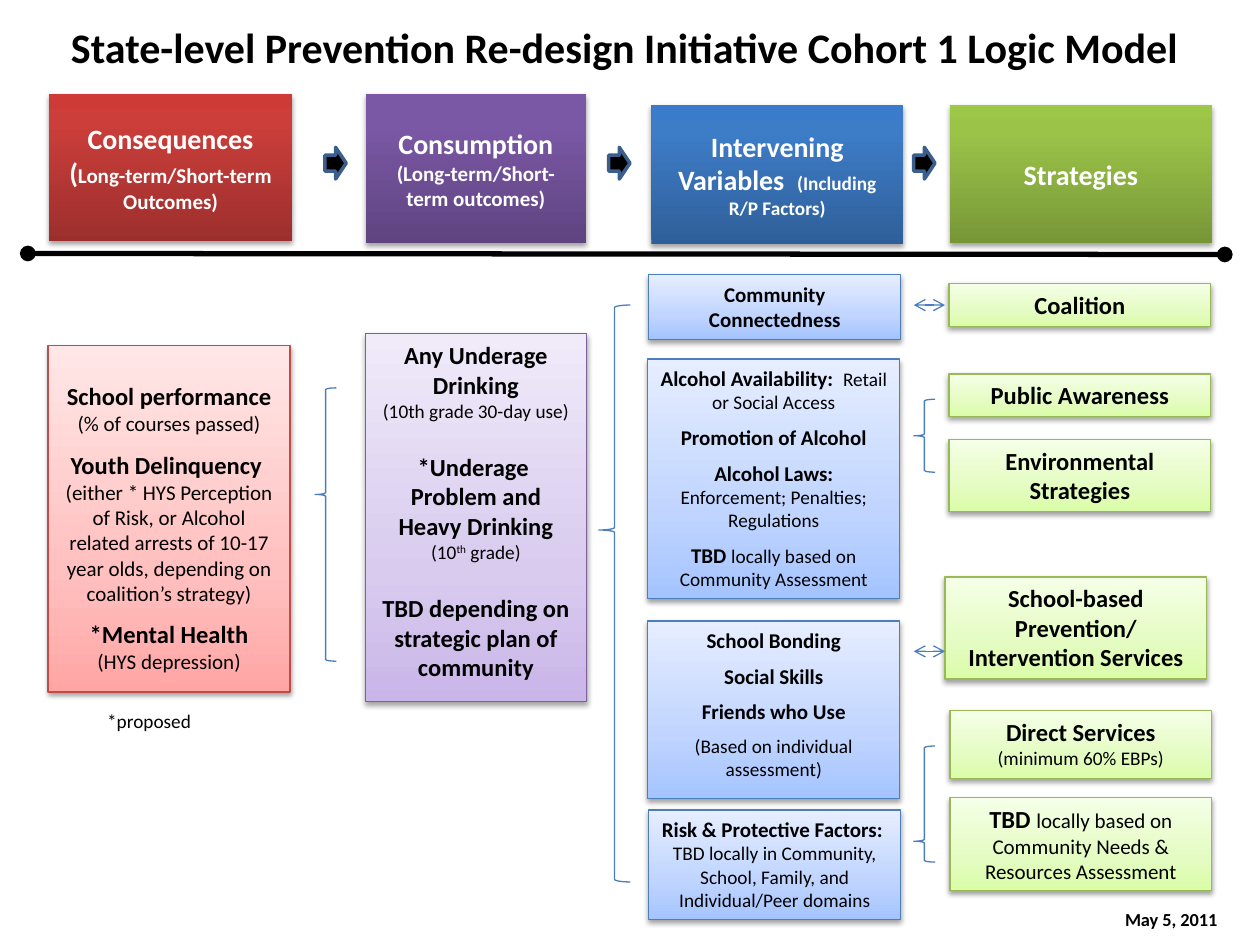
from copy import deepcopy
from typing import NamedTuple

from lxml.etree import SubElement
from pptx import Presentation
from pptx.dml.color import RGBColor
from pptx.enum.shapes import MSO_CONNECTOR as Connector, MSO_SHAPE as Shape
from pptx.enum.text import MSO_ANCHOR as Anchor, MSO_AUTO_SIZE as AutoSize, PP_ALIGN as Align
from pptx.oxml.ns import qn
from pptx.util import Cm, Pt

BLACK, WHITE, BLUE = "000000", "FFFFFF", "4B7EBC"
BLANK_LINE = 17


class Run(NamedTuple):
    text: str
    size: float
    bold: bool = False
    raised: bool = False


def strong(text, size=14):
    return Run(text, size, True)


def plain(text, size=11):
    return Run(text, size)


def color(hex_string):
    return RGBColor.from_string(hex_string)


def write(frame, *paragraphs, ink=BLACK, align=Align.CENTER, anchor=Anchor.TOP, top=0.13):
    """Fill a frame; each paragraph is (points of space before, run, run, ...)."""
    frame.word_wrap = True
    frame.auto_size = AutoSize.NONE
    frame.vertical_anchor = anchor
    frame.margin_left = frame.margin_right = Cm(0.25)
    frame.margin_top, frame.margin_bottom = Cm(top), Cm(0.13)
    for number, (before, *runs) in enumerate(paragraphs):
        paragraph = frame.paragraphs[0] if number == 0 else frame.add_paragraph()
        paragraph.alignment = align
        paragraph.space_before = Pt(before)
        for part in runs:
            for index, line in enumerate(part.text.split("\n")):
                if index:
                    paragraph.add_line_break()
                run = paragraph.add_run()
                run.text = line
                run.font.name, run.font.size = "Calibri", Pt(part.size)
                run.font.bold = part.bold
                run.font.color.rgb = color(ink)
                if part.raised:
                    run.font._element.set("baseline", "30000")


class LogicModel:
    """The slide, with the gradient and border of each column."""
    HEADERS = {
        "red": ("9C2F2D", "CB3E3A", "CE3B37"),
        "purple": ("5F4480", "7B58A6", "7C57A8"),
        "blue": ("2F5F99", "3D7CC7", "3A7CCB"),
        "green": ("779737", "9BC348", "9DC746"),
    }
    CARDS = {
        "red": ("FFA6A5", "FFC0BF", "FFE7E7"),
        "purple": ("C9B5E8", "D8CBEE", "F0EAF9"),
        "blue": ("A4C4FF", "BFD4FF", "E6EEFF"),
        "green": ("DAFDA7", "E4FCC2", "F5FFE7"),
    }
    BORDERS = {"red": "BF4C48", "purple": "7D60A0", "blue": BLUE, "green": "98B955"}

    def __init__(self, slide):
        self.slide = slide

    def title(self, box, text):
        heading = self.slide.shapes.title
        heading.left, heading.top, heading.width, heading.height = map(Cm, box)
        write(heading.text_frame, (0, strong(text, 24)))

    def label(self, box, run, anchor=Anchor.TOP):
        frame = self.slide.shapes.add_textbox(*map(Cm, box)).text_frame
        write(frame, (0, run), align=Align.LEFT, anchor=anchor)

    def shape(self, kind, box):
        shape = self.slide.shapes.add_shape(kind, *map(Cm, box))
        shape.shadow.inherit = False
        return shape

    def panel(self, box, shades, middle):
        """Rectangle with a three-stop upward gradient and a soft shadow."""
        panel = self.shape(Shape.RECTANGLE, box)
        panel.fill.gradient()
        panel.fill.gradient_angle = 90
        properties = panel._element.spPr
        stops = properties.find(".//" + qn("a:gsLst"))
        stops.append(deepcopy(stops[0]))
        for stop, place, shade in zip(panel.fill.gradient_stops, (0, middle, 1), shades):
            stop.color.rgb = color(shade)
            stop.position = place
        shadow = SubElement(properties.find(qn("a:effectLst")), qn("a:outerShdw"),
                            blurRad="39400", dist="22000", dir="5400000", rotWithShape="0")
        tone = SubElement(shadow, qn("a:srgbClr"), val=BLACK)
        SubElement(tone, qn("a:alpha"), val="36000")
        return panel

    def header(self, hue, box, *paragraphs):
        panel = self.panel(box, self.HEADERS[hue], 0.8)
        panel.line.fill.background()
        write(panel.text_frame, *paragraphs, ink=WHITE, anchor=Anchor.MIDDLE)

    def card(self, hue, box, *paragraphs, top=0.13):
        panel = self.panel(box, self.CARDS[hue], 0.35)
        panel.line.color.rgb = color(self.BORDERS[hue])
        panel.line.width = Pt(0.75)
        write(panel.text_frame, *paragraphs, top=top)

    def line(self, start, end, ink, width, tip):
        line = self.slide.shapes.add_connector(Connector.STRAIGHT, *map(Cm, start + end))
        line.line.color.rgb = color(ink)
        line.line.width = Pt(width)
        for side in ("a:headEnd", "a:tailEnd"):
            SubElement(line.line._get_or_add_ln(), qn(side), type=tip)
        SubElement(line._element.spPr, qn("a:effectLst"))

    def brace(self, box, point):
        brace = self.shape(Shape.LEFT_BRACE, box)
        brace.adjustments[0], brace.adjustments[1] = 0.08, point
        brace.fill.background()
        brace.line.color.rgb = color(BLUE)
        brace.line.width = Pt(0.75)

    def block_arrow(self, left):
        arrow = self.shape(Shape.RIGHT_ARROW, (left, 2.97, 0.43, 0.64))
        arrow.fill.solid()
        arrow.fill.fore_color.rgb = color(BLACK)
        arrow.line.color.rgb = color("3A5F8C")
        arrow.line.width = Pt(2)


def main():
    deck = Presentation()
    deck.slide_width, deck.slide_height = Cm(25.4), Cm(19.05)
    model = LogicModel(deck.slides.add_slide(deck.slide_layouts[5]))
    model.title((0.84, 0.3, 23.5, 1.3),
                "State-level Prevention Re-design Initiative Cohort 1 Logic Model")

    model.header("red", (0.99, 1.9, 4.9, 2.97),
                 (0, strong("Consequences (", 16), strong("Long-term/Short-term Outcomes)", 12)))
    model.header("purple", (7.37, 1.9, 4.45, 3),
                 (0, strong("Consumption", 16)),
                 (0, strong("(Long-term/Short-term outcomes)", 12)))
    model.header("blue", (13.13, 2.11, 5.08, 2.82),
                 (0, strong("Intervening Variables  ", 16), strong("(Including R/P Factors)", 11)))
    model.header("green", (19.15, 2.11, 5.28, 2.79), (0, strong("Strategies", 16)))
    for left in (6.55, 12.27, 18.42):
        model.block_arrow(left)
    model.line((0.56, 5.11), (24.69, 5.13), BLACK, 3, "oval")

    model.card("red", (0.97, 6.96, 4.88, 6.99),
               (0, strong("School performance "), plain("(% of courses passed)", 12)),
               (8, strong("Youth Delinquency ")),
               (0, plain("(either * HYS Perception of Risk, or Alcohol related arrests of "
                         "10-17 year olds, depending on coalition’s strategy)", 12)),
               (8, strong("*Mental Health")),
               (0, plain("(HYS depression)", 12)), top=0.73)
    model.card("purple", (7.37, 6.73, 4.45, 7.42),
               (0, strong("Any Underage Drinking")),
               (0, plain("(10th grade 30-day use)")),
               (BLANK_LINE, strong("*Underage \nProblem and Heavy Drinking")),
               (0, plain("(10"), Run("th", 11, raised=True), plain(" grade)")),
               (BLANK_LINE, strong("TBD depending on strategic plan of community")))

    model.card("blue", (13.08, 5.54, 5.08, 1.3), (0, strong("Community Connectedness", 12)))
    model.card("blue", (13.06, 7.24, 5.08, 4.83),
               (0, strong("Alcohol Availability:  ", 12), plain("Retail or Social Access")),
               (6, strong("Promotion of Alcohol", 12)),
               (6, strong("Alcohol Laws: ", 12), plain("Enforcement; Penalties; Regulations")),
               (6, strong("TBD ", 12), plain("locally based on Community Assessment")))
    model.card("blue", (13.06, 12.52, 5.08, 3.58),
               *((6, strong(factor, 12))
                 for factor in ("School Bonding", "Social Skills", "Friends who Use")),
               (6, plain("(Based on individual assessment)")))
    model.card("blue", (13.08, 16.33, 5.08, 2.21),
               (0, strong("Risk & Protective Factors:  ", 12),
                plain("TBD locally in Community, School, Family, and Individual/Peer domains")))

    strategies = [
        (19.13, 5.72, 0.86, [(0, strong("Coalition"))]),
        (19.13, 7.54, 0.86, [(0, strong("Public Awareness"))]),
        (19.13, 8.86, 1.45, [(0, strong("Environmental Strategies"))]),
        (19.05, 11.63, 2.06, [(0, strong("School-based Prevention/ Intervention Services"))]),
        (19.15, 14.33, 1.37, [(0, strong("Direct Services")), (0, plain("(minimum 60% EBPs)"))]),
        (19.15, 16.08, 1.88, [(0, strong("TBD "), plain(
            "locally based on Community Needs & Resources Assessment", 12))]),
    ]
    for left, top, height, paragraphs in strategies:
        model.card("green", (left, top, 5.28, height), *paragraphs)

    for y in (6.15, 13.13):
        model.line((19.05, y), (18.42, y), BLUE, 0.75, "arrow")
    model.brace((6.35, 7.82, 0.43, 5.51), 0.39)
    model.brace((12.07, 6.15, 0.64, 11.63), 0.39)
    model.brace((18.42, 8.05, 0.43, 1.47), 0.5)
    model.brace((18.42, 15.04, 0.43, 2.34), 0.82)
    model.label((1.91, 14.17, 2.34, 0.74), plain("*proposed"))
    model.label((22.43, 18.03, 2.54, 1.02), strong("May 5, 2011", 10.5), Anchor.MIDDLE)
    deck.save("out.pptx")


if __name__ == "__main__":
    main()
